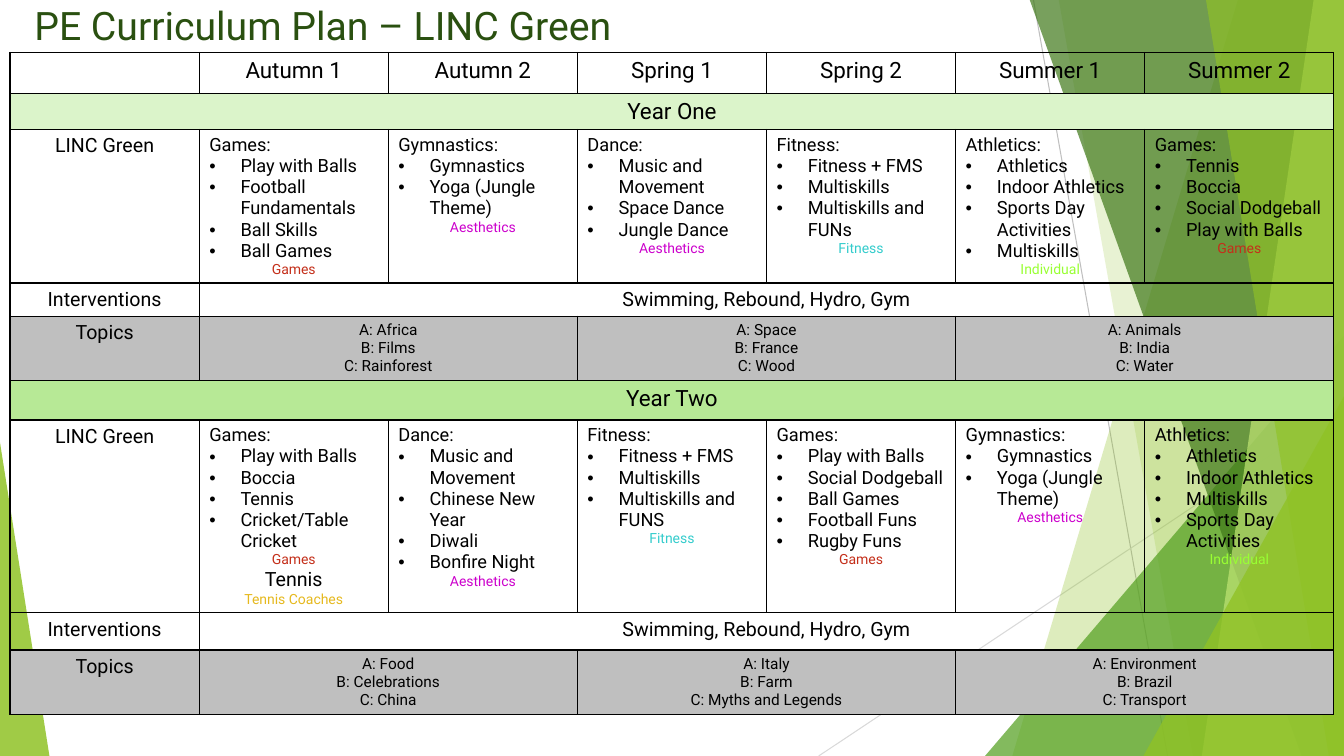
from lxml import etree
from pptx import Presentation
from pptx.dml.color import RGBColor
from pptx.enum import shapes, text
from pptx.oxml import ns
from pptx.util import Inches, Pt

FONT = "Roboto"
BLACK = RGBColor(0x00, 0x00, 0x00)
TITLE_GREEN = RGBColor(0x2A, 0x50, 0x10)
LEAF = RGBColor(0x90, 0xC2, 0x26)
GRASS = RGBColor(0x54, 0xA0, 0x21)
FOREST = RGBColor(0x3F, 0x78, 0x19)
LIME = RGBColor(0xC0, 0xE4, 0x74)
YEAR_ONE = RGBColor(0xDB, 0xF4, 0xCA)
YEAR_TWO = RGBColor(0xB7, 0xE9, 0x96)
GREY = RGBColor(0xBF, 0xBF, 0xBF)
PALE_GREY = RGBColor(0xD9, 0xD9, 0xD9)
GOLD = RGBColor(0xE6, 0xB9, 0x1E)
STRANDS = {
    "Games": RGBColor(0xC4, 0x2F, 0x1A),
    "Aesthetics": RGBColor(0xCC, 0x00, 0xCC),
    "Fitness": RGBColor(0x33, 0xCC, 0xCC),
    "Individual": RGBColor(0x99, 0xFF, 0x33),
}

TITLE = "PE Curriculum Plan – LINC Green"
TERMS = ["Autumn 1", "Autumn 2", "Spring 1", "Spring 2", "Summer 1", "Summer 2"]
INTERVENTIONS = "Swimming, Rebound, Hydro, Gym"
COACHING = [("Tennis", 14, BLACK), ("Tennis Coaches", 10, GOLD)]
YEARS = [
    {
        "name": "Year One",
        "fill": YEAR_ONE,
        "units": [
            ("Games:", ["Play with Balls", "Football Fundamentals", "Ball Skills", "Ball Games"], "Games", []),
            ("Gymnastics:", ["Gymnastics", "Yoga (Jungle Theme)"], "Aesthetics", []),
            ("Dance:", ["Music and Movement", "Space Dance", "Jungle Dance"], "Aesthetics", []),
            ("Fitness:", ["Fitness + FMS", "Multiskills", "Multiskills and FUNs"], "Fitness", []),
            ("Athletics:", ["Athletics", "Indoor Athletics", "Sports Day Activities", "Multiskills"],
             "Individual", []),
            ("Games:", ["Tennis", "Boccia", "Social Dodgeball", "Play with Balls"], "Games", []),
        ],
        "topics": [("Africa", "Films", "Rainforest"), ("Space", "France", "Wood"),
                   ("Animals", "India", "Water")],
    },
    {
        "name": "Year Two",
        "fill": YEAR_TWO,
        "units": [
            ("Games:", ["Play with Balls", "Boccia", "Tennis", "Cricket/Table Cricket"], "Games", COACHING),
            ("Dance:", ["Music and Movement", "Chinese New Year", "Diwali", "Bonfire Night"],
             "Aesthetics", []),
            ("Fitness:", ["Fitness + FMS", "Multiskills", "Multiskills and FUNS"], "Fitness", []),
            ("Games:", ["Play with Balls", "Social Dodgeball", "Ball Games", "Football Funs", "Rugby Funs"],
             "Games", []),
            ("Gymnastics:", ["Gymnastics", "Yoga (Jungle Theme)"], "Aesthetics", []),
            ("Athletics:", ["Athletics", "Indoor Athletics", "Multiskills", "Sports Day Activities"],
             "Individual", []),
        ],
        "topics": [("Food", "Celebrations", "China"), ("Italy", "Farm", "Myths and Legends"),
                   ("Environment", "Brazil", "Transport")],
    },
]
ROW_HEIGHTS = [0.39, 0.36, 1.52, 0.33, 0.64, 0.39, 1.91, 0.37, 0.64]

RAYS = [((10.25, 0), (11.58, 7.5), GREY), ((13.33, 4.03), (8.12, 7.5), PALE_GREY)]
TOP, RIGHT, BOTTOM = -0.01, 13.33, 7.5
FACETS = [
    ("band", 12.28, 10.04, LEAF, 30),
    ("band", 10.5, 11.83, LEAF, 20),
    ("triangle", (9.77, 3.33, 3.56, 4.17), 1, GRASS, 72),
    ("band", 10.21, 12.91, FOREST, 70),
    ("band", 13.03, 11.92, LIME, 70),
    ("band", 11.96, 13.18, LEAF, 65),
    ("triangle", (11.34, 3.93, 1.99, 3.57), 1, LEAF, 80),
    ("triangle", (0, 4.39, 0.49, 3.11), 0, LEAF, 85),
]


def add_ray(slide, start, end, color):
    ray = slide.shapes.add_connector(shapes.MSO_CONNECTOR.STRAIGHT, *map(Inches, start + end))
    ray.line.color.rgb = color
    ray.line.width = Pt(0.75)
    etree.SubElement(ray.element.spPr, ns.qn("a:effectLst"))


def add_facet(slide, kind, place, tip, color, opacity):
    if kind == "band":
        corners = [(place, TOP), (RIGHT, TOP), (RIGHT, BOTTOM), (tip, BOTTOM)]
        points = [(Inches(x), Inches(y)) for x, y in corners]
        builder = slide.shapes.build_freeform(*points[0])
        builder.add_line_segments(points[1:], close=True)
        facet = builder.convert_to_shape()
    else:
        facet = slide.shapes.add_shape(shapes.MSO_SHAPE.ISOSCELES_TRIANGLE, *map(Inches, place))
        facet.adjustments[0] = tip
    facet.shadow.inherit = False
    facet.line.fill.background()
    facet.fill.solid()
    facet.fill.fore_color.rgb = color
    tint = facet.element.spPr.find(ns.qn("a:solidFill"))[0]
    etree.SubElement(tint, ns.qn("a:alpha"), val=str(opacity * 1000))


def add_run(paragraph, words, size, color=BLACK):
    run = paragraph.add_run()
    run.text = words
    run.font.name = FONT
    run.font.size = Pt(size)
    run.font.color.rgb = color


def write(cell, lines):
    frame = cell.text_frame
    for index, (words, size, color, style) in enumerate(lines):
        paragraph = frame.add_paragraph() if index else frame.paragraphs[0]
        paragraph.alignment = text.PP_ALIGN.CENTER if style == "center" else text.PP_ALIGN.LEFT
        if style == "bullet":
            props = paragraph._p.get_or_add_pPr()
            props.set("marL", str(Inches(0.31)))
            props.set("indent", str(-Inches(0.31)))
            etree.SubElement(props, ns.qn("a:buFont"), typeface="Arial")
            etree.SubElement(props, ns.qn("a:buChar"), char="•")
        add_run(paragraph, words, size, color)


def write_centered(cell, size, *words):
    write(cell, [(line, size, BLACK, "center") for line in words])


def frame_cell(cell, fill):
    props = cell._tc.get_or_add_tcPr()
    for side in ("lnL", "lnR", "lnT", "lnB"):
        border = etree.SubElement(props, ns.qn("a:" + side), w=str(Pt(1)))
        ink = etree.SubElement(border, ns.qn("a:solidFill"))
        etree.SubElement(ink, ns.qn("a:srgbClr"), val=str(BLACK))
    if fill is None:
        cell.fill.background()
    else:
        cell.fill.solid()
        cell.fill.fore_color.rgb = fill


def fill_year(plan, top, year):
    banner, units, interventions, topics = range(top, top + 4)
    plan.cell(banner, 0).merge(plan.cell(banner, 6))
    write_centered(plan.cell(banner, 0), 16, year["name"])
    for row, label in ((units, "LINC Green"), (interventions, "Interventions"), (topics, "Topics")):
        write_centered(plan.cell(row, 0), 14, label)
    for column, (heading, activities, strand, extras) in enumerate(year["units"], 1):
        lines = [(heading, 13, BLACK, "left")]
        lines += [(activity, 13, BLACK, "bullet") for activity in activities]
        lines += [(*extra, "center") for extra in [(strand, 10, STRANDS[strand])] + extras]
        write(plan.cell(units, column), lines)
    plan.cell(interventions, 1).merge(plan.cell(interventions, 6))
    write_centered(plan.cell(interventions, 1), 14, INTERVENTIONS)
    for index, names in enumerate(year["topics"]):
        column = 1 + 2 * index
        plan.cell(topics, column).merge(plan.cell(topics, column + 1))
        lines = [f"{letter}: {name}" for letter, name in zip("ABC", names)]
        write_centered(plan.cell(topics, column), 11, *lines)


def main():
    deck = Presentation()
    deck.slide_width, deck.slide_height = Inches(13.33), Inches(7.5)
    slide = deck.slides.add_slide(deck.slide_layouts[5])
    for ray in RAYS:
        add_ray(slide, *ray)
    for facet in FACETS:
        add_facet(slide, *facet)

    title = slide.shapes.title
    title.element.getparent().append(title.element)
    title.left, title.top, title.width, title.height = map(Inches, (0.24, -0.04, 12.85, 0.75))
    title.text_frame.vertical_anchor = text.MSO_ANCHOR.TOP
    title.text_frame.paragraphs[0].alignment = text.PP_ALIGN.LEFT
    add_run(title.text_frame.paragraphs[0], TITLE, 28, TITLE_GREEN)

    plan = slide.shapes.add_table(len(ROW_HEIGHTS), 7, Inches(0.1), Inches(0.52), Inches(13.13),
                                  Inches(sum(ROW_HEIGHTS))).table
    plan.first_row = plan.horz_banding = False
    for row, height in zip(plan.rows, ROW_HEIGHTS):
        row.height = Inches(height)
    fills = [None] + [fill for year in YEARS for fill in (year["fill"], None, None, GREY)]
    for row, fill in enumerate(fills):
        for column in range(7):
            frame_cell(plan.cell(row, column), fill)
    for column, term in enumerate(TERMS, 1):
        write_centered(plan.cell(0, column), 16, term)
    for index, year in enumerate(YEARS):
        fill_year(plan, 1 + 4 * index, year)
    deck.save("out.pptx")


if __name__ == "__main__":
    main()
